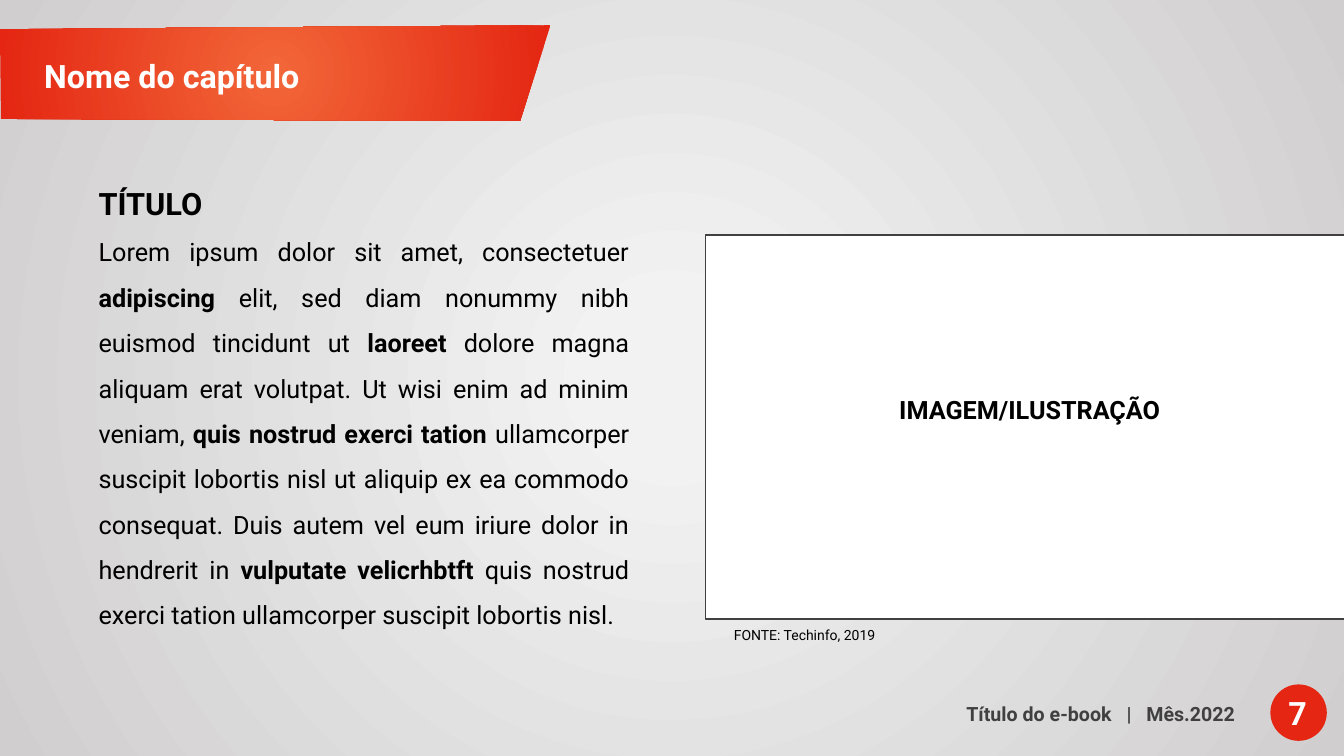
"""Build an e-book page with a chapter banner, body text and an illustration frame."""
from lxml import etree
from pptx import Presentation, util as u
from pptx.dml.color import RGBColor
from pptx.enum import shapes, text
from pptx.oxml import ns

PX = 9144
WHITE = RGBColor(0xFF, 0xFF, 0xFF)
BLACK = RGBColor(0x00, 0x00, 0x00)
GREY = RGBColor(0x40, 0x40, 0x40)
RED = RGBColor(0xE4, 0x26, 0x12)
ORANGE = RGBColor(0xF2, 0x67, 0x39)
PALE = RGBColor(0xF2, 0xF2, 0xF2)
SILVER = RGBColor(0xD0, 0xCE, 0xCE)


def fill_radial(shape, inner, outer, start):
    shape.shadow.inherit = False
    shape.line.fill.background()
    shape.fill.gradient()
    for stop, color, position in zip(shape.fill.gradient_stops, (inner, outer), (start, 1)):
        stop.color.rgb = color
        stop.position = position
    gradient = shape._element.spPr.find(ns.qn("a:gradFill"))
    gradient.remove(gradient.find(ns.qn("a:lin")))
    circle = etree.SubElement(gradient, ns.qn("a:path"), path="circle")
    etree.SubElement(circle, ns.qn("a:fillToRect"), l="50000", t="50000", r="50000", b="50000")


def add_text(box, paragraphs, color, align=text.PP_ALIGN.LEFT, spacing=1.0):
    frame = slide.shapes.add_textbox(*(v * PX for v in box)).text_frame
    frame.word_wrap = True
    frame.auto_size = text.MSO_AUTO_SIZE.SHAPE_TO_FIT_TEXT
    for i, (size, pieces) in enumerate(paragraphs):
        paragraph = frame.add_paragraph() if i else frame.paragraphs[0]
        paragraph.alignment = align
        paragraph.line_spacing = spacing
        for words, bold in pieces:
            run = paragraph.add_run()
            run.text = words
            run.font.name = "Roboto"
            run.font.size = u.Pt(size)
            run.font.bold = bold
            run.font.color.rgb = color
    return frame


prs = Presentation()
prs.slide_width, prs.slide_height = 1333 * PX, 750 * PX
slide = prs.slides.add_slide(prs.slide_layouts[6])

backdrop = slide.shapes.add_shape(
    shapes.MSO_SHAPE.RECTANGLE, 0, 0, prs.slide_width, prs.slide_height)
fill_radial(backdrop, PALE, SILVER, 0.09)

outline = slide.shapes.build_freeform(0, 29, scale=PX)
outline.add_line_segments([(546, 25), (516, 120), (1, 118)])
banner = outline.convert_to_shape()
fill_radial(banner, ORANGE, RED, 0)
add_text((34, 51, 306, 49), [(23, [("Nome do capítulo", True)])], WHITE)

footer = add_text(
    (585, 691, 665, 34),
    [(14, [("Título do e-book", True), (" |", True), (" Mês.2022", True)])],
    GREY, text.PP_ALIGN.RIGHT)
footer.margin_right = 25 * PX
separator = footer.paragraphs[0].runs[1]
separator._r.get_or_add_rPr().set("spc", "700")

page_badge = slide.shapes.add_shape(
    shapes.MSO_SHAPE.OVAL, *(v * PX for v in (1260, 679, 56, 56)))
page_badge.shadow.inherit = False
page_badge.fill.solid()
page_badge.fill.fore_color.rgb = RED
page_badge.line.fill.background()
add_text((1268, 683, 56, 49), [(23, [("7", True)])], WHITE)

body = [
    ("Lorem ipsum dolor sit amet, consectetuer ", False),
    ("adipiscing ", True),
    ("elit, sed diam nonummy nibh euismod tincidunt ut ", False),
    ("laoreet ", True),
    ("dolore magna aliquam erat volutpat. Ut wisi enim ad minim veniam, ", False),
    ("quis nostrud exerci tation ", True),
    ("ullamcorper suscipit lobortis nisl ut aliquip ex ea commodo consequat. "
     "Duis autem vel eum iriure dolor in hendrerit in ", False),
    ("vulputate velicrhbtft ", True),
    ("quis nostrud exerci tation ullamcorper suscipit lobortis nisl.", False),
]
add_text((88, 160, 546, 470), [(22, [("TÍTULO", True)]), (18, body)],
         BLACK, text.PP_ALIGN.JUSTIFY, 1.5)

illustration = slide.shapes.add_shape(
    shapes.MSO_SHAPE.RECTANGLE, *(v * PX for v in (700, 233, 650, 381)))
illustration.shadow.inherit = False
illustration.fill.solid()
illustration.fill.fore_color.rgb = WHITE
illustration.line.color.rgb = GREY
illustration.line.width = u.Pt(1)
add_text((882, 386, 285, 40), [(18, [("IMAGEM/ILUSTRAÇÃO", True)])], BLACK)
add_text((718, 617, 425, 27), [(10, [("FONTE: Techinfo, 2019", False)])], BLACK)

prs.save("out.pptx")
